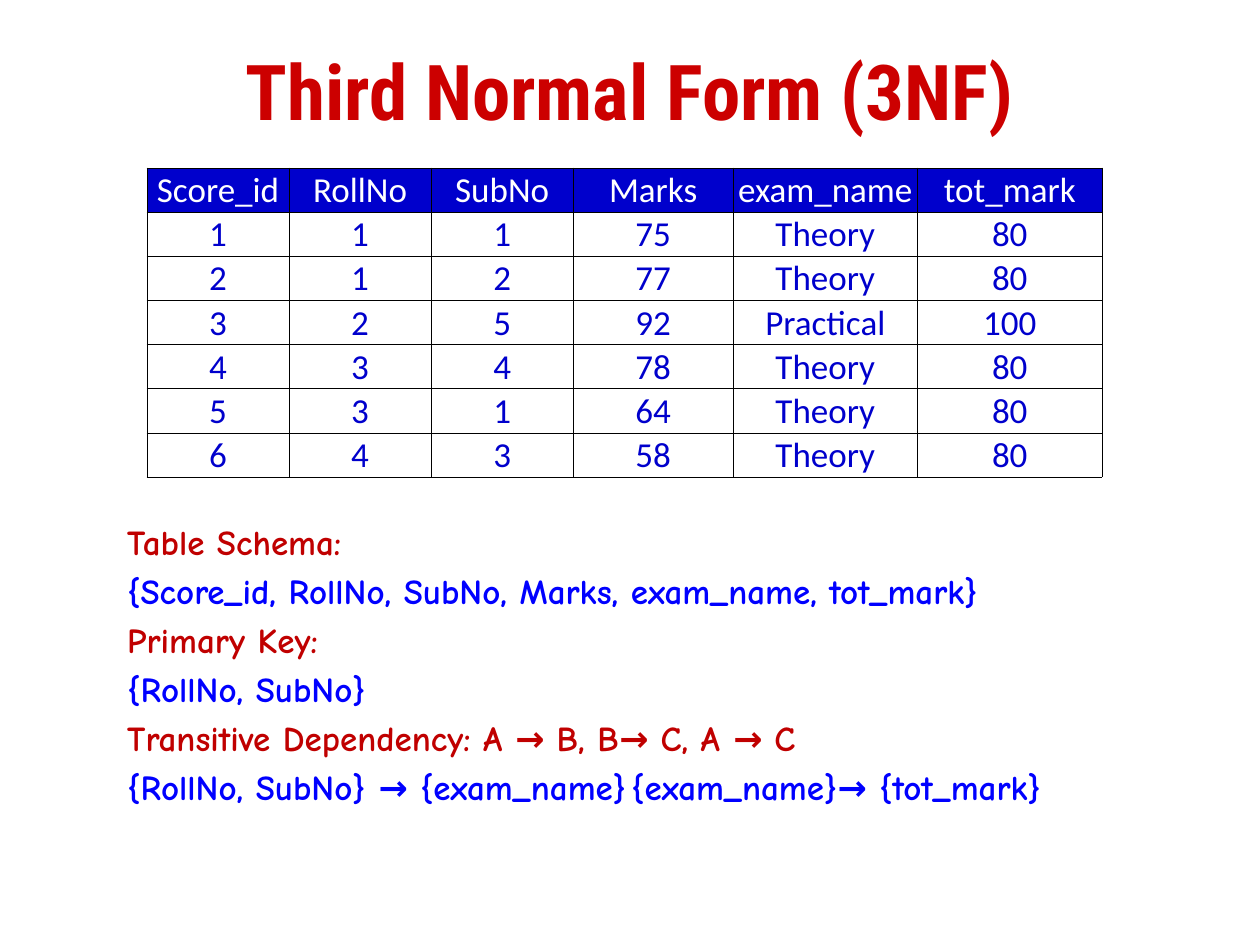
from lxml import etree
from pptx import Presentation
from pptx.dml import color
from pptx.enum import text
from pptx.oxml import ns
from pptx.util import Pt

COLORS = {
    "title": "CC0000",
    "header": "0000CC",
    "header_text": "FFFFFF",
    "label": "C00000",
    "schema": "0000FF",
    "border": "000000",
}

SCORES = [
    ("Score_id", "RollNo", "SubNo", "Marks", "exam_name", "tot_mark"),
    (1, 1, 1, 75, "Theory", 80),
    (2, 1, 2, 77, "Theory", 80),
    (3, 2, 5, 92, "Practical", 100),
    (4, 3, 4, 78, "Theory", 80),
    (5, 3, 1, 64, "Theory", 80),
    (6, 4, 3, 58, "Theory", 80),
]
COLUMN_WIDTHS = (81.2, 81.2, 81.2, 91.4, 105.4, 105.4)
ROW_HEIGHT = 25.2

# Labels and their definitions alternate; a tab parts the two dependencies.
NOTES = [
    "Table Schema:",
    "{Score_id, RollNo, SubNo, Marks, exam_name, tot_mark}",
    "Primary Key:",
    "{RollNo, SubNo}",
    "Transitive Dependency: A → B, B→ C, A → C",
    "{RollNo, SubNo} → {exam_name}\t{exam_name}→ {tot_mark}",
]
DEPENDENCY_TAB = 300


def rgb(name):
    return color.RGBColor.from_string(COLORS[name])


def place(shape, left, top, width, height):
    shape.left, shape.top = Pt(left), Pt(top)
    shape.width, shape.height = Pt(width), Pt(height)


def style(paragraph, font_name, size, color_name, bold=False):
    font = paragraph.font
    font.name, font.size, font.bold = font_name, Pt(size), bold
    font.color.rgb = rgb(color_name)


def add_title(slide):
    title = slide.shapes.title
    place(title, 54, 6, 612, 90)
    title.text_frame.text = "Third Normal Form (3NF)"
    title.text_frame.vertical_anchor = text.MSO_ANCHOR.MIDDLE
    heading = title.text_frame.paragraphs[0]
    heading.alignment = text.PP_ALIGN.CENTER
    style(heading, "Roboto Condensed", 44, "title", bold=True)


def add_borders(cell):
    """Draw a thin line on all four sides; call before setting the fill."""
    properties = cell._tc.get_or_add_tcPr()
    for side in ("a:lnL", "a:lnR", "a:lnT", "a:lnB"):
        line = etree.SubElement(properties, ns.qn(side), w=str(Pt(0.5)))
        fill = etree.SubElement(line, ns.qn("a:solidFill"))
        etree.SubElement(fill, ns.qn("a:srgbClr"), val=COLORS["border"])


def fill_cell(cell, value, is_header):
    cell.text = str(value)
    cell.vertical_anchor = text.MSO_ANCHOR.BOTTOM
    cell.margin_left = cell.margin_right = cell.margin_top = Pt(0.72)
    cell.margin_bottom = 0
    add_borders(cell)
    if is_header:
        cell.fill.solid()
        cell.fill.fore_color.rgb = rgb("header")
    else:
        cell.fill.background()
    entry = cell.text_frame.paragraphs[0]
    entry.alignment = text.PP_ALIGN.CENTER
    style(entry, "Calibri", 20, "header_text" if is_header else "header")


def add_score_table(slide):
    frame = slide.shapes.add_table(
        len(SCORES), len(COLUMN_WIDTHS), Pt(84), Pt(96),
        Pt(sum(COLUMN_WIDTHS)), Pt(ROW_HEIGHT * len(SCORES)))
    scores = frame.table
    scores.first_row = scores.horz_banding = False
    for column, width in zip(scores.columns, COLUMN_WIDTHS):
        column.width = Pt(width)
    for r, record in enumerate(SCORES):
        scores.rows[r].height = Pt(ROW_HEIGHT)
        for c, value in enumerate(record):
            fill_cell(scores.cell(r, c), value, is_header=r == 0)


def format_as_plain_line(paragraph):
    """Remove the bullet and indent, and set the tab for dependencies."""
    properties = paragraph._p.get_or_add_pPr()
    properties.set("marL", "0")
    properties.set("indent", "0")
    etree.SubElement(properties, ns.qn("a:buNone"))
    if "\t" in paragraph.text:
        tabs = etree.SubElement(properties, ns.qn("a:tabLst"))
        etree.SubElement(tabs, ns.qn("a:tab"), pos=str(Pt(DEPENDENCY_TAB)), algn="l")


def add_notes_on_keys(slide):
    body = slide.placeholders[1]
    place(body, 65.5, 294, 625.5, 206)
    frame = body.text_frame
    frame.text = "\n".join(NOTES)
    frame.word_wrap = False
    frame.auto_size = text.MSO_AUTO_SIZE.NONE
    frame.vertical_anchor = text.MSO_ANCHOR.TOP
    for i, line in enumerate(frame.paragraphs):
        format_as_plain_line(line)
        line.space_before = Pt(4 if i else 0)
        style(line, "Comic Neue", 20, "schema" if i % 2 else "label", bold=True)


def main():
    deck = Presentation()
    deck.slide_width, deck.slide_height = Pt(720), Pt(540)
    slide = deck.slides.add_slide(deck.slide_layouts[1])
    add_title(slide)
    add_score_table(slide)
    add_notes_on_keys(slide)
    deck.save("out.pptx")


if __name__ == "__main__":
    main()
